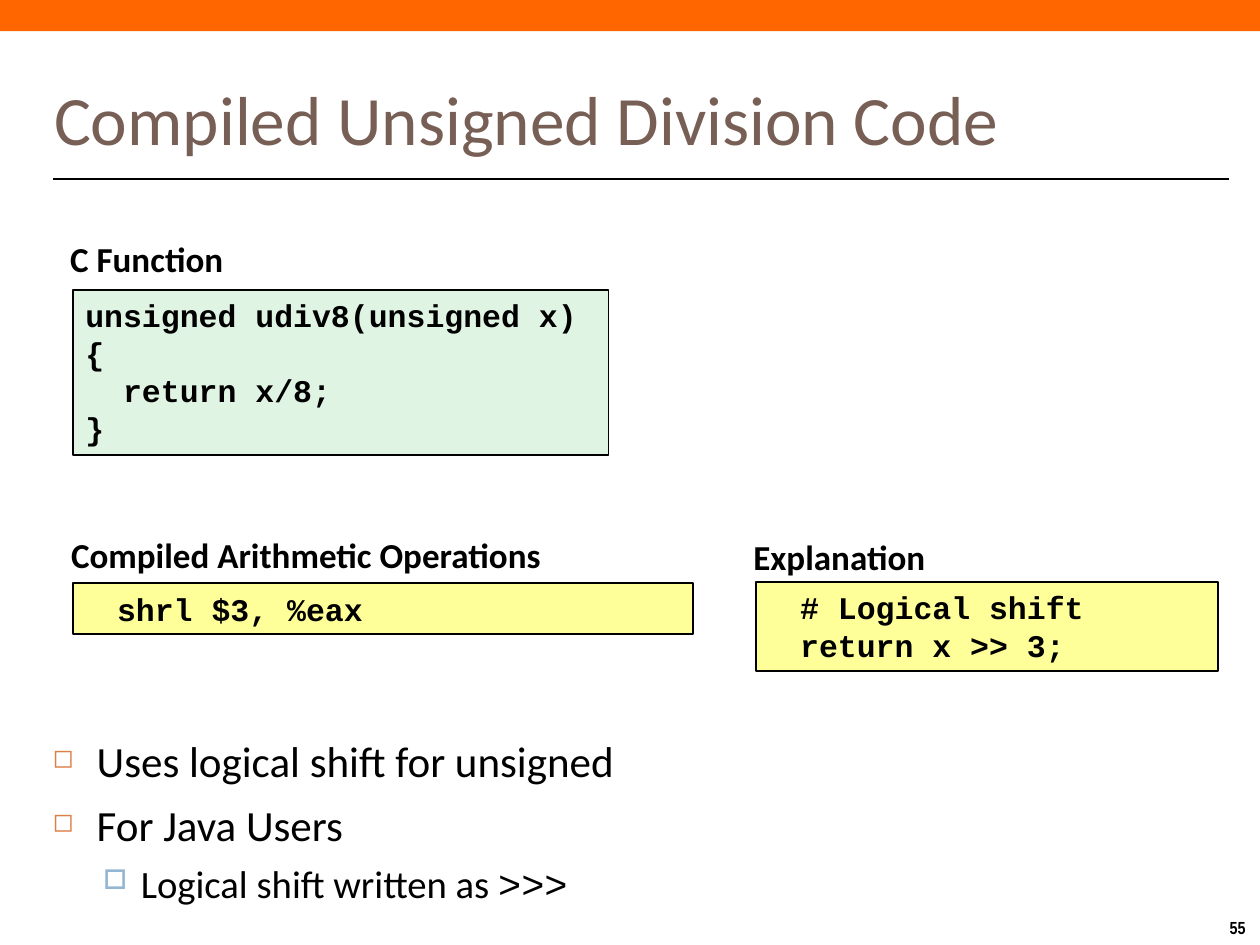
from lxml.etree import SubElement
from pptx import Presentation
from pptx.dml.color import RGBColor
from pptx.enum.shapes import MSO_CONNECTOR, MSO_SHAPE
from pptx.enum.text import MSO_ANCHOR, PP_ALIGN
from pptx.oxml.ns import qn
from pptx.util import Cm, Pt


def rgb(value):
    return RGBColor.from_string(value)


class SlideBuilder:
    BLACK, ORANGE, BROWN = "000000", "FF6600", "775F55"
    GREEN, YELLOW = "E0F4E3", "FFFF99"
    BODY, CODE, NUMBER = "Calibri", "Courier New", "Arial Narrow"

    def __init__(self, prs):
        self.s = prs.slides.add_slide(prs.slide_layouts[6])

    def run(self, p, text, color=BLACK, **fmt):
        r = p.add_run()
        r.text = text
        for name, value in fmt.items():
            setattr(r.font, name, value)
        r.font.color.rgb = rgb(color)

    def rect(self, x, y, w, h, fill, line=None):
        sp = self.s.shapes.add_shape(
            MSO_SHAPE.RECTANGLE, Cm(x), Cm(y), Cm(w), Cm(h))
        sp.shadow.inherit = False
        sp.fill.solid()
        sp.fill.fore_color.rgb = rgb(fill)
        if line:
            sp.line.color.rgb = rgb(line)
            sp.line.width = Pt(1)
        else:
            sp.line.fill.background()
        return sp

    def rule(self, x1, x2, y):
        ln = self.s.shapes.add_connector(
            MSO_CONNECTOR.STRAIGHT, Cm(x1), Cm(y), Cm(x2), Cm(y))
        ln.line.color.rgb = rgb(self.BLACK)
        ln.line.width = Pt(1.5)
        SubElement(ln._element.spPr, qn("a:effectLst"))

    def box(self, x, y, w, h, **frame):
        tf = self.s.shapes.add_textbox(Cm(x), Cm(y), Cm(w), Cm(h)).text_frame
        for name, value in {"word_wrap": True, **frame}.items():
            setattr(tf, name, value)
        return tf

    def heading(self, text, x, y, w):
        inset = Cm(0.13)
        tf = self.box(x, y, w, 1.12, word_wrap=False, margin_left=inset,
                      margin_right=inset)
        p = tf.paragraphs[0]
        p.alignment = PP_ALIGN.CENTER
        self.run(p, text, name=self.BODY, size=Pt(20), bold=True)

    def code(self, lines, x, y, w, h, fill, indent=0):
        tf = self.rect(x, y, w, h, fill, self.BLACK).text_frame
        tf.vertical_anchor = MSO_ANCHOR.TOP
        for i, line in enumerate(lines):
            p = tf.add_paragraph() if i else tf.paragraphs[0]
            p.alignment = PP_ALIGN.LEFT
            p._p.get_or_add_pPr().set("marL", str(Cm(indent)))
            self.run(p, line, name=self.CODE, size=Pt(18), bold=True)

    def bullet(self, p, parts, level=0):
        # Left margin, hang, space before, text size, mark, its colour and size
        margin, hang, before, size, mark, color, scale = (
            (0.89, 0.89, 7, 24.6, "◻", "DD8047", 60),
            (1.78, 0.76, 5.5, 22.1, "□", "94B6D2", 70),
        )[level]
        p.level = level
        p.space_before = Pt(before)
        pPr = p._p.get_or_add_pPr()
        pPr.set("marL", str(Cm(margin)))
        pPr.set("indent", str(-Cm(hang)))
        SubElement(SubElement(pPr, qn("a:buClr")), qn("a:srgbClr"), val=color)
        SubElement(pPr, qn("a:buSzPct"), val=str(scale * 1000))
        SubElement(pPr, qn("a:buChar"), char=mark)
        for text, font in parts:
            self.run(p, text, name=font, size=Pt(size))


def main():
    prs = Presentation()
    prs.slide_width, prs.slide_height = Cm(25.4), Cm(19.05)
    b = SlideBuilder(prs)

    # Top band, title and rule
    b.rect(0, 0, 25.4, 0.63, b.ORANGE)
    tf = b.box(0.84, 1.57, 22.02, 1.6, vertical_anchor=MSO_ANCHOR.MIDDLE)
    b.run(tf.paragraphs[0], "Compiled Unsigned Division Code", b.BROWN,
          name=b.BODY, size=Pt(39.6))
    b.rule(1.07, 24.77, 3.61)

    # C source
    b.heading("C Function", 1.27, 4.67, 3.38)
    b.code(["unsigned udiv8(unsigned x)", "{", "  return x/8;", "}"],
           1.47, 5.84, 10.8, 3.33, b.GREEN)

    # Compiled code and its meaning
    b.heading("Compiled Arithmetic Operations", 1.27, 10.64, 9.8)
    b.code(["shrl $3, %eax"], 1.47, 11.76, 12.5, 1.02, b.YELLOW, 0.64)
    b.heading("Explanation", 15.04, 10.67, 3.76)
    b.code(["# Logical shift", "return x >> 3;"],
           15.24, 11.73, 9.32, 1.8, b.YELLOW, 0.64)

    # Bullets
    tf = b.box(0.81, 14.68, 23.09, 3.3)
    b.bullet(tf.paragraphs[0], [("Uses logical shift for unsigned", b.BODY)])
    b.bullet(tf.add_paragraph(), [("For Java Users", b.BODY)])
    b.bullet(tf.add_paragraph(),
             [("Logical shift written as ", b.BODY), (">>>", b.CODE)], 1)

    # Page number
    tf = b.box(24.54, 18.36, 0.86, 0.69, word_wrap=False)
    b.run(tf.paragraphs[0], "55", name=b.NUMBER, size=Pt(10), bold=True)

    prs.save("out.pptx")


if __name__ == "__main__":
    main()
